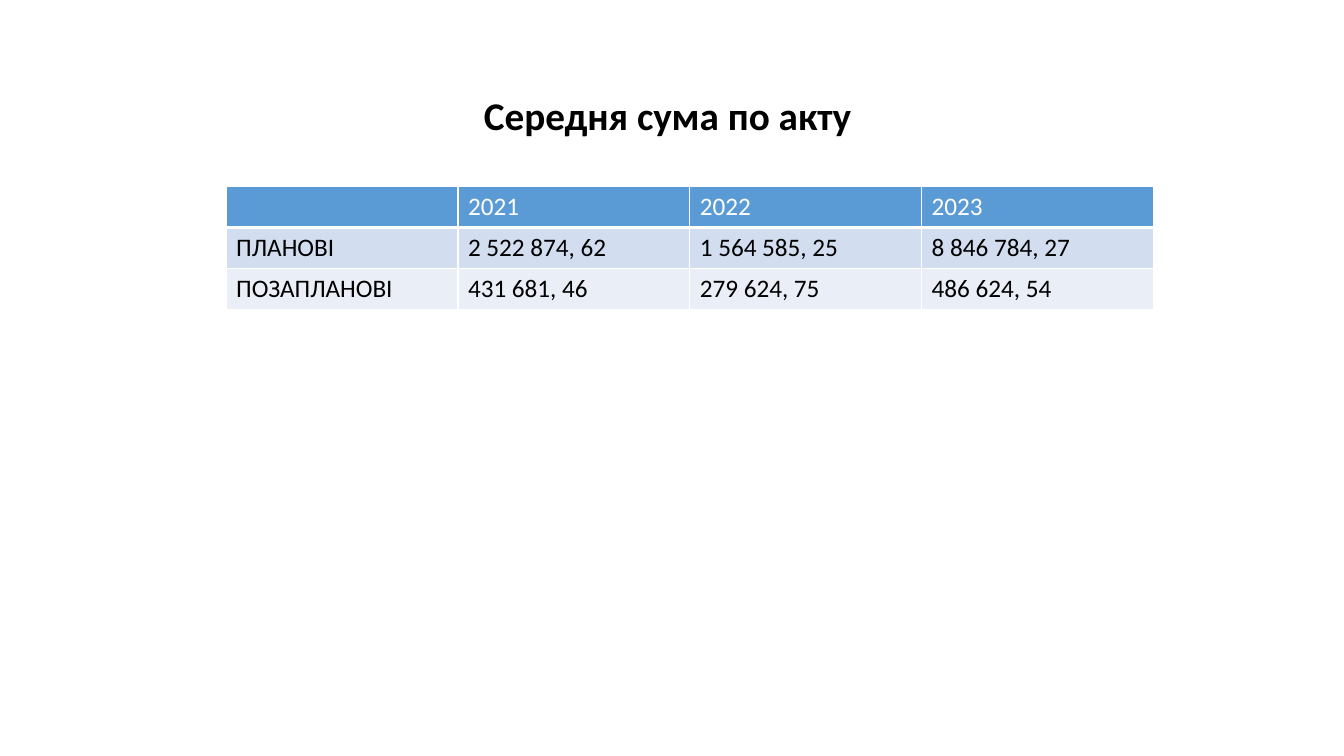
"""Build a slide with a table of the average amount per audit act by year."""
import lxml.etree
import pptx
import pptx.dml.color
import pptx.enum.text
import pptx.oxml.ns
import pptx.util

Pt = pptx.util.Pt
RGB = pptx.dml.color.RGBColor.from_string

HEADING = "Середня сума по акту "
AMOUNTS = [
    ("", "2021", "2022", "2023"),
    ("ПЛАНОВІ", "2 522 874, 62", "1 564 585, 25", "8 846 784, 27"),
    ("ПОЗАПЛАНОВІ", "431 681, 46", "279 624, 75", "486 624, 54"),
]

THEME = {
    "font": "Calibri",
    "heading_size": 28,
    "cell_size": 18,
    "text": "000000",
    "header_text": "FFFFFF",
    "row_fills": ("5B9BD5", "D2DEEF", "EAEFF7"),
    "border": "FFFFFF",
}
SLIDE_SIZE = (960, 540)
HEADING_BOX = (66, 28.75, 828, 104.4)
TABLE_LEFT, TABLE_TOP = 161.5, 133.2
COLUMN_WIDTH, ROW_HEIGHT = 165.6, 29.2
HEADING_INDENT = 27
BORDER_WIDTHS = {"lnL": 1, "lnR": 1, "lnT": 1, "lnB": 1}
HEADER_BORDER_WIDTHS = {**BORDER_WIDTHS, "lnB": 3}


def apply(target, values):
    for name, value in values.items():
        setattr(target, name, value)


def style_font(font, size, color, bold):
    apply(font, {"name": THEME["font"], "size": Pt(size), "bold": bold})
    font.color.rgb = RGB(color)


def add_heading(slide):
    frame = slide.shapes.add_textbox(*map(Pt, HEADING_BOX)).text_frame
    apply(frame, {"word_wrap": True, "vertical_anchor": pptx.enum.text.MSO_ANCHOR.MIDDLE})
    paragraph = frame.paragraphs[0]
    apply(paragraph, {
        "alignment": pptx.enum.text.PP_ALIGN.CENTER,
        "line_spacing": 1.07,
        "space_after": Pt(8),
    })
    properties = paragraph._p.get_or_add_pPr()
    properties.set("marL", str(Pt(HEADING_INDENT)))
    properties.set("indent", str(-Pt(HEADING_INDENT)))
    run = paragraph.add_run()
    run.text = HEADING
    style_font(run.font, THEME["heading_size"], THEME["text"], True)


def add_borders(cell, widths):
    qn = pptx.oxml.ns.qn
    properties = cell._tc.get_or_add_tcPr()
    for side, width in widths.items():
        line = lxml.etree.SubElement(properties, qn(f"a:{side}"), w=str(Pt(width)))
        fill = lxml.etree.SubElement(line, qn("a:solidFill"))
        lxml.etree.SubElement(fill, qn("a:srgbClr"), val=THEME["border"])


def add_amounts(slide):
    rows, columns = len(AMOUNTS), len(AMOUNTS[0])
    table = slide.shapes.add_table(
        rows, columns, Pt(TABLE_LEFT), Pt(TABLE_TOP),
        Pt(columns * COLUMN_WIDTH), Pt(rows * ROW_HEIGHT),
    ).table
    for row, (labels, fill) in enumerate(zip(AMOUNTS, THEME["row_fills"])):
        header = row == 0
        color = THEME["header_text" if header else "text"]
        for column, label in enumerate(labels):
            cell = table.cell(row, column)
            add_borders(cell, HEADER_BORDER_WIDTHS if header else BORDER_WIDTHS)
            cell.fill.solid()
            cell.fill.fore_color.rgb = RGB(fill)
            cell.text = label
            paragraph = cell.text_frame.paragraphs[0]
            style_font(paragraph.font, THEME["cell_size"], color, False)
            for run in paragraph.runs:
                style_font(run.font, THEME["cell_size"], color, False)


def main():
    deck = pptx.Presentation()
    deck.slide_width, deck.slide_height = map(Pt, SLIDE_SIZE)
    slide = deck.slides.add_slide(deck.slide_layouts[6])
    add_heading(slide)
    add_amounts(slide)
    deck.save("out.pptx")


if __name__ == "__main__":
    main()
